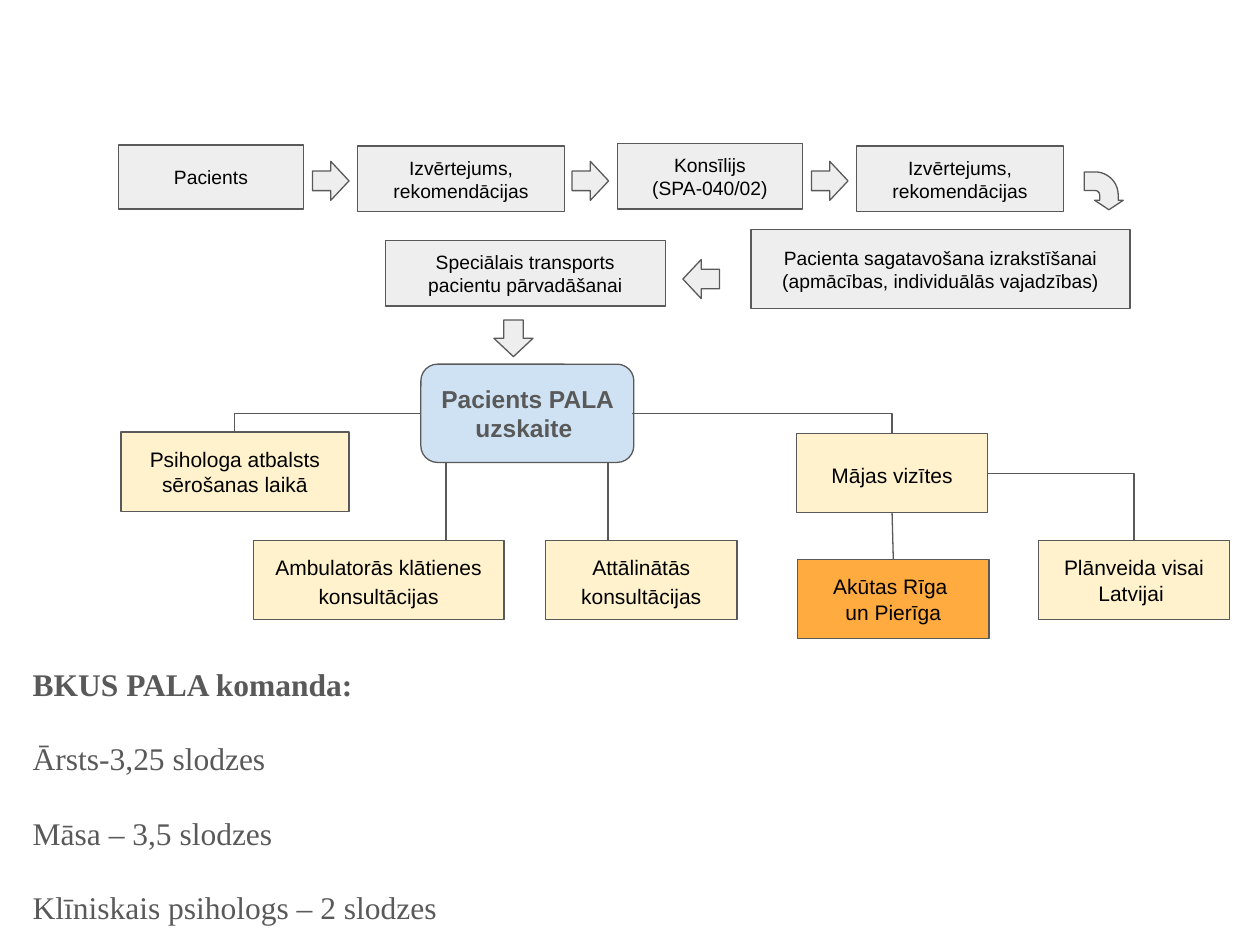
from typing import NamedTuple

from lxml.etree import SubElement
from pptx import Presentation
from pptx.dml.color import RGBColor as Rgb
from pptx.enum.shapes import MSO_CONNECTOR as Link, MSO_SHAPE as Form
from pptx.enum.text import MSO_ANCHOR as Anchor, MSO_AUTO_SIZE as Fit, PP_ALIGN as Align
from pptx.oxml.ns import qn
from pptx.util import Inches, Pt

COLS, ROWS = 100, 75
WIDE, HIGH = Inches(10), Inches(7.5)
HUES = {"gray": "EEEEEE", "cream": "FFF2CC", "blue": "CFE2F3",
        "orange": "FFAB40", "edge": "595959", "ink": "000000"}
FRAME = {"margin_left": Inches(0.1), "margin_right": Inches(0.1),
         "margin_top": Inches(0.1), "margin_bottom": Inches(0.1),
         "word_wrap": True, "auto_size": Fit.NONE}


class Box(NamedTuple):
    text: str
    col: float
    row: float
    wide: float
    high: float
    hue: str = "cream"
    size: int = 12
    gap: float = 1.0


class Arrow(NamedTuple):
    col: float
    row: float
    turn: int
    form: Form = Form.DOWN_ARROW
    wide: float = 3.1
    high: float = 2.9
    bends: tuple = (0.5, 0.5)


class Wire(NamedTuple):
    start: tuple
    end: tuple
    kind: str


STEPS = [
    Box("Pacients", 9.4, 11.5, 14.7, 5.1, "gray", 11),
    Box("Izvērtejums, rekomendācijas", 28.4, 11.6, 16.4, 5.2, "gray", 11),
    Box("Konsīlijs (SPA-040/02)", 49, 11.4, 14.7, 5.2, "gray", 11),
    Box("Izvērtejums, rekomendācijas", 68, 11.6, 16.4, 5.2, "gray", 11),
    Box("Pacienta sagatavošana izrakstīšanai (apmācības, individuālās vajadzības)",
        59.6, 18.2, 30.1, 6.3, "gray", 11),
    Box("Speciālais transports pacientu pārvadāšanai", 30.6, 19.1, 22.2, 5.2, "gray", 11),
]
CARE = [
    Box("Psihologa atbalsts sērošanas laikā", 9.6, 34.3, 18.1, 6.3),
    Box("Ambulatorās klātienes konsultācijas", 20.1, 42.9, 19.9, 6.3, gap=1.15),
    Box("Attālinātās konsultācijas", 43.3, 42.9, 15.2, 6.3, gap=1.15),
    Box("Mājas vizītes", 63.2, 34.4, 15.2, 6.3, gap=1.15),
    Box("Plānveida visai Latvijai ", 82.4, 42.9, 15.2, 6.3),
    Box("Akūtas Rīga \nun Pierīga", 63.3, 44.4, 15.2, 6.3, "orange"),
]
HUB = Box("Pacients PALA uzskaite ", 33.4, 28.9, 16.9, 7.8, "blue", 14)
ARROWS = [
    *(Arrow(col, 12.9, 270) for col in (24.7, 45.3, 64.3)),
    Arrow(54.1, 20.7, 90),
    Arrow(39.2, 25.4, 0),
    Arrow(86.1, 13.6, 90, Form.BENT_ARROW, 3, 3.1, (0.49, 0.38, 0.25, 0.61)),
]
WIRES = [
    Wire((33.4, 32.8), (18.6, 34.3), "bentConnector2"),
    Wire((50.2, 32.8), (70.8, 34.4), "bentConnector2"),
    Wire((78.4, 37.6), (90, 42.9), "bentConnector2"),
    Wire((40.1, 36.7), (30.7, 42.9), "bentConnector3"),
    Wire((42.6, 36.7), (53.9, 42.9), "bentConnector3"),
    Wire((70.9, 44.4), (70.8, 40.7), "line"),
]
TEAM = ["BKUS PALA komanda:", "Ārsts-3,25 slodzes", "Māsa – 3,5 slodzes",
        "Klīniskais psihologs – 2 slodzes"]


def x(col: float) -> int:
    return round(WIDE * col / COLS)


def y(row: float) -> int:
    return round(HIGH * row / ROWS)


def apply(item, values: dict) -> None:
    for name, value in values.items():
        setattr(item, name, value)


def tint(hue: str) -> Rgb:
    return Rgb.from_string(HUES[hue])


def edge(line) -> None:
    line.color.rgb = tint("edge")
    line.width = Pt(0.75)


def add(slide, form: Form, col: float, row: float, wide: float, high: float, hue: str):
    shape = slide.shapes.add_shape(form, x(col), y(row), x(wide), y(high))
    shape.shadow.inherit = False
    shape.fill.solid()
    shape.fill.fore_color.rgb = tint(hue)
    edge(shape.line)
    return shape


def draw_box(slide, box: Box, form: Form = Form.RECTANGLE,
             ink: str = "ink", bold: bool = False):
    shape = add(slide, form, box.col, box.row, box.wide, box.high, box.hue)
    frame = shape.text_frame
    apply(frame, {**FRAME, "vertical_anchor": Anchor.MIDDLE})
    frame.text = box.text
    for para in frame.paragraphs:
        apply(para, {"alignment": Align.CENTER, "line_spacing": box.gap})
        apply(para.runs[0].font, {"name": "Arial", "size": Pt(box.size), "bold": bold})
        para.runs[0].font.color.rgb = tint(ink)
    return shape


def draw_arrow(slide, arrow: Arrow) -> None:
    shape = add(slide, arrow.form, arrow.col, arrow.row, arrow.wide, arrow.high, "gray")
    shape.rotation = arrow.turn
    for spot, bend in enumerate(arrow.bends):
        shape.adjustments[spot] = bend


def draw_wire(slide, wire: Wire) -> None:
    kind = Link.STRAIGHT if wire.kind == "line" else Link.ELBOW
    (left, top), (right, base) = wire.start, wire.end
    link = slide.shapes.add_connector(kind, x(left), y(top), x(right), y(base))
    edge(link.line)
    props = link._element.spPr
    props.find(qn("a:prstGeom")).set("prst", wire.kind)
    SubElement(props, qn("a:effectLst"))


def fill_team(body) -> None:
    apply(body, {"left": x(1.6), "top": y(50.3), "width": x(47.3), "height": y(23.9)})
    frame = body.text_frame
    apply(frame, {**FRAME, "vertical_anchor": Anchor.TOP})
    frame.text = "\n".join(TEAM)
    for spot, para in enumerate(frame.paragraphs):
        props = para._p.get_or_add_pPr()
        props.set("marL", "0")
        props.set("indent", "0")
        SubElement(props, qn("a:buNone"))
        apply(para, {"line_spacing": 1.5, "space_before": Pt(10 if spot else 0)})
        font = para.runs[0].font
        apply(font, {"name": "Times New Roman", "size": Pt(18), "bold": spot == 0})
        font.color.rgb = tint("edge")


def main() -> None:
    deck = Presentation()
    apply(deck, {"slide_width": WIDE, "slide_height": HIGH})
    slide = deck.slides.add_slide(deck.slide_layouts[1])
    title = slide.shapes.title._element
    title.getparent().remove(title)

    # Team list
    fill_team(slide.placeholders[1])

    # Patient path and care services
    for box in STEPS + CARE:
        draw_box(slide, box)
    hub = draw_box(slide, HUB, Form.ROUNDED_RECTANGLE, "edge", True)
    hub.adjustments[0] = 0.17

    # Arrows and links
    for arrow in ARROWS:
        draw_arrow(slide, arrow)
    for wire in WIRES:
        draw_wire(slide, wire)

    deck.save("out.pptx")


if __name__ == "__main__":
    main()
